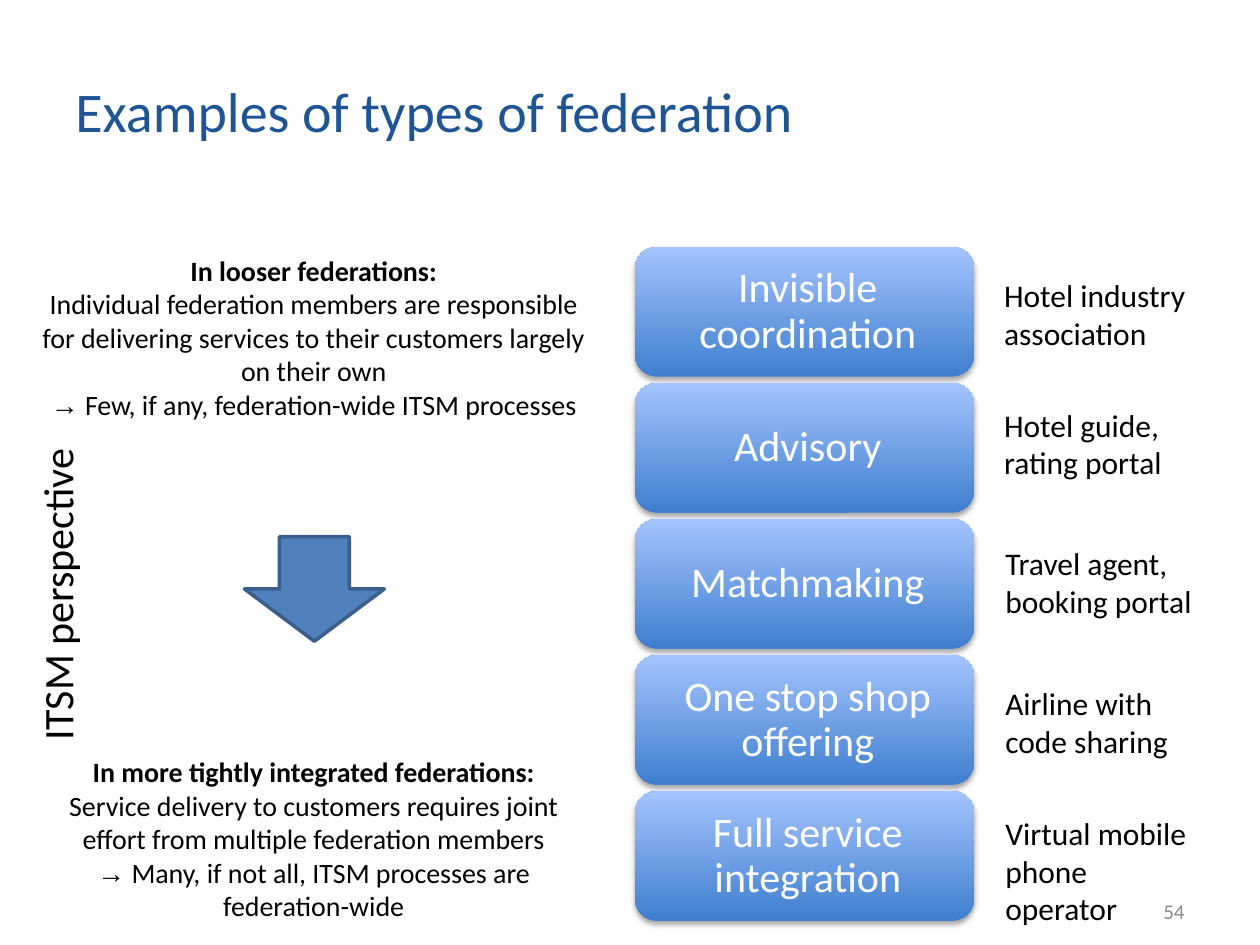
from dataclasses import dataclass

from lxml import etree
from pptx import Presentation
from pptx.dml.color import RGBColor
from pptx.enum.shapes import MSO_SHAPE
from pptx.enum.text import MSO_ANCHOR, PP_ALIGN
from pptx.oxml.ns import qn
from pptx.util import Inches, Pt

TITLE = "Examples of types of federation"
PERSPECTIVE = "ITSM perspective"
PAGE_NUMBER = "54"

# federation type, example, (left, top, width) of the example
LEVELS = [
    ("Invisible coordination", "Hotel industry\nassociation", (7.87, 2.14, 1.69)),
    ("Advisory", "Hotel guide,\nrating portal", (7.87, 3.17, 1.45)),
    ("Matchmaking", "Travel agent,\nbooking portal", (7.88, 4.27, 1.68)),
    ("One stop shop offering", "Airline with \vcode sharing", (7.88, 5.38, 1.49)),
    ("Full service integration", "Virtual mobile\nphone operator", (7.88, 6.41, 1.79)),
]

# top, heading, description, consequence
EXPLANATIONS = [
    (1.96, "In looser federations:",
     "Individual federation members are responsible for delivering services "
     "to their customers largely on their own",
     "Few, if any, federation-wide ITSM processes"),
    (5.94, "In more tightly integrated federations:",
     "Service delivery to customers requires joint effort from multiple "
     "federation members",
     "Many, if not all, ITSM processes are federation-wide"),
]

LEVEL_LEFT, LEVEL_TOP, LEVEL_PITCH = 5.04, 1.96, 1.08
LEVEL_WIDTH, LEVEL_HEIGHT = 2.69, 1.03


@dataclass(frozen=True)
class Theme:
    font: str = "Calibri"
    symbol_font: str = "Arial"
    title: str = "205595"
    text: str = "000000"
    on_level: str = "FFFFFF"
    muted: str = "8B8B8B"
    level_bottom: str = "3F7FCE"
    level_top: str = "A4C4FF"
    arrow: str = "4F81BD"
    arrow_line: str = "3A5F8C"
    title_size: int = 32
    level_size: int = 24
    example_size: int = 18
    body_size: int = 16
    page_size: int = 12


THEME = Theme()


def rgb(color):
    return RGBColor.from_string(color)


def style(paragraph, size, color, align=PP_ALIGN.LEFT, bold=False):
    paragraph.alignment = align
    font = paragraph.font
    font.name, font.size, font.bold = THEME.font, Pt(size), bold
    font.color.rgb = rgb(color)


def add_text(slide, box, text, size, color, align=PP_ALIGN.LEFT,
             anchor=MSO_ANCHOR.TOP, wrap=True):
    label = slide.shapes.add_textbox(*map(Inches, box))
    frame = label.text_frame
    frame.word_wrap, frame.vertical_anchor = wrap, anchor
    frame.text = text
    for paragraph in frame.paragraphs:
        style(paragraph, size, color, align)
    return label


def add_soft_shadow(shape):
    """Put a faint shadow straight below the shape."""
    shape.shadow.inherit = False
    effects = shape._element.spPr.find(qn("a:effectLst"))
    shadow = etree.SubElement(
        effects, qn("a:outerShdw"), blurRad=str(Pt(3.1)), dist=str(Pt(1.8)),
        dir="5400000", rotWithShape="0")
    color = etree.SubElement(shadow, qn("a:srgbClr"), val="000000")
    etree.SubElement(color, qn("a:alpha"), val="35000")


def add_level(slide, row, name):
    box = (LEVEL_LEFT, LEVEL_TOP + row * LEVEL_PITCH, LEVEL_WIDTH, LEVEL_HEIGHT)
    level = slide.shapes.add_shape(MSO_SHAPE.ROUNDED_RECTANGLE, *map(Inches, box))
    level.fill.gradient()
    level.fill.gradient_angle = 90
    for stop, color in zip(level.fill.gradient_stops,
                           (THEME.level_bottom, THEME.level_top)):
        stop.color.rgb = rgb(color)
    level.line.fill.background()
    add_soft_shadow(level)

    frame = level.text_frame
    frame.word_wrap, frame.vertical_anchor = True, MSO_ANCHOR.MIDDLE
    frame.margin_left = Inches(0.15)
    frame.margin_top = frame.margin_right = frame.margin_bottom = Inches(0.1)
    frame.text = name
    frame.paragraphs[0].line_spacing = 0.9
    style(frame.paragraphs[0], THEME.level_size, THEME.on_level, PP_ALIGN.CENTER)


def add_explanation(slide, top, heading, description, consequence):
    label = add_text(slide, (0.18, top, 4.62, 1.43), f"{heading}\n{description}",
                     THEME.body_size, THEME.text, PP_ALIGN.CENTER)
    frame = label.text_frame
    frame.paragraphs[0].font.bold = True
    result = frame.add_paragraph()
    style(result, THEME.body_size, THEME.text, PP_ALIGN.CENTER)
    for text, font in (("→", THEME.symbol_font), (f" {consequence}", THEME.font)):
        run = result.add_run()
        run.text, run.font.name = text, font


def add_down_arrow(slide):
    arrow = slide.shapes.add_shape(
        MSO_SHAPE.DOWN_ARROW, *map(Inches, (1.94, 4.26, 1.11, 0.83)))
    arrow.shadow.inherit = False
    arrow.fill.solid()
    arrow.fill.fore_color.rgb = rgb(THEME.arrow)
    arrow.line.color.rgb = rgb(THEME.arrow_line)
    arrow.line.width = Pt(2)


def main():
    deck = Presentation()
    deck.slide_width, deck.slide_height = Inches(10), Inches(7.5)
    slide = deck.slides.add_slide(deck.slide_layouts[6])

    add_text(slide, (0.5, 0.3, 8.04, 1.15), TITLE, THEME.title_size, THEME.title,
             anchor=MSO_ANCHOR.MIDDLE)
    for row, (name, example, (left, top, width)) in enumerate(LEVELS):
        add_level(slide, row, name)
        add_text(slide, (left, top, width, 0.7), example, THEME.example_size,
                 THEME.text, wrap=False)
    add_text(slide, (7.17, 7.03, 2.33, 0.4), PAGE_NUMBER, THEME.page_size,
             THEME.muted, PP_ALIGN.RIGHT, MSO_ANCHOR.MIDDLE)
    add_down_arrow(slide)
    for explanation in EXPLANATIONS:
        add_explanation(slide, *explanation)
    perspective = add_text(slide, (-0.81, 4.47, 2.52, 0.5), PERSPECTIVE,
                           THEME.level_size, THEME.text, PP_ALIGN.CENTER, wrap=False)
    perspective.rotation = 270

    deck.save("out.pptx")


if __name__ == "__main__":
    main()
